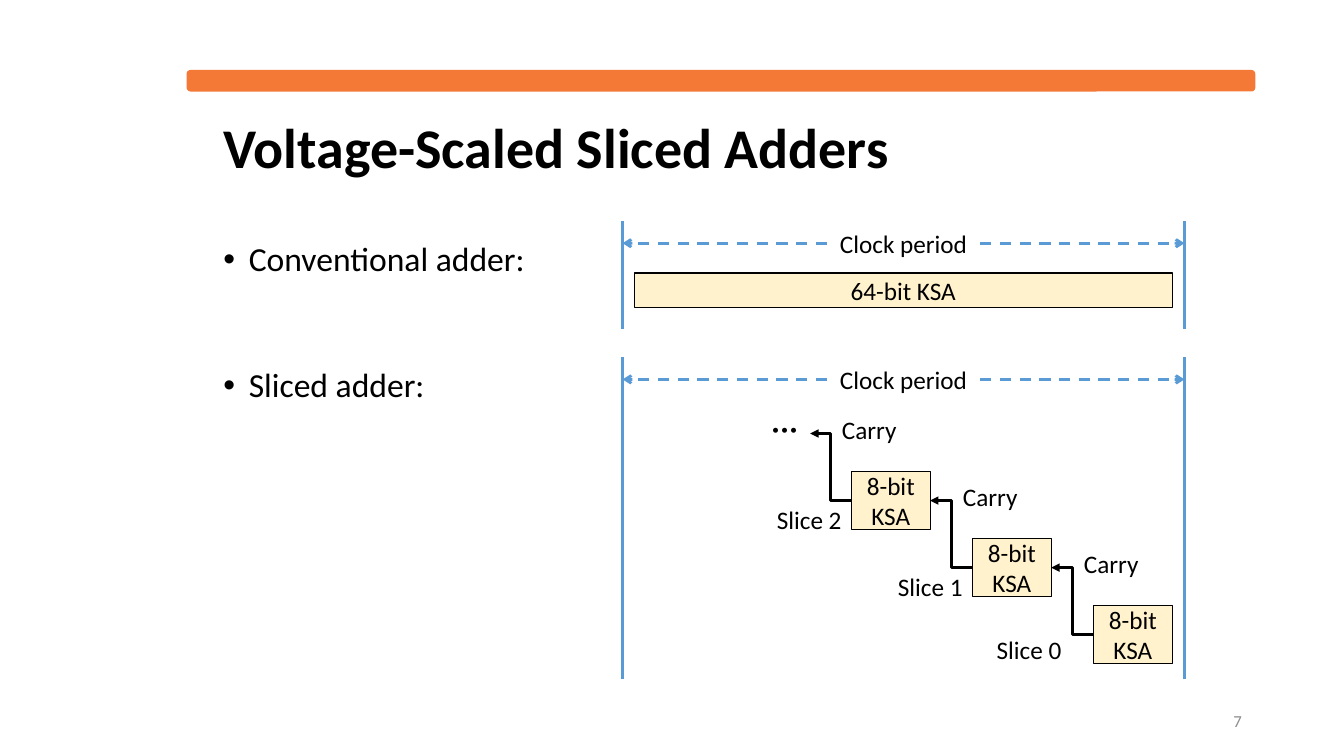
from dataclasses import dataclass

from lxml import etree
from pptx import Presentation
from pptx.dml.color import RGBColor
from pptx.enum.dml import MSO_LINE
from pptx.enum.shapes import MSO_CONNECTOR, MSO_SHAPE
from pptx.enum.text import MSO_ANCHOR, PP_ALIGN
from pptx.oxml.ns import qn
from pptx.util import Cm, Pt

STRAIGHT, ELBOW = MSO_CONNECTOR.STRAIGHT, MSO_CONNECTOR.ELBOW
RECTANGLE, ROUNDED = MSO_SHAPE.RECTANGLE, MSO_SHAPE.ROUNDED_RECTANGLE
LEFT, CENTER, RIGHT = PP_ALIGN.LEFT, PP_ALIGN.CENTER, PP_ALIGN.RIGHT
TOP, MIDDLE = MSO_ANCHOR.TOP, MSO_ANCHOR.MIDDLE
DASH = MSO_LINE.DASH
LEFT_SIDE, RIGHT_SIDE = 1, 3


@dataclass(frozen=True)
class Theme:
    font: str = "Calibri"
    ink: RGBColor = RGBColor(0x00, 0x00, 0x00)
    muted: RGBColor = RGBColor(0x8C, 0x8C, 0x8C)
    accent: RGBColor = RGBColor(0xF4, 0x78, 0x36)
    timing: RGBColor = RGBColor(0x5B, 0x9B, 0xD5)
    adder: RGBColor = RGBColor(0xFF, 0xF2, 0xCC)
    title: int = 40
    body: int = 24
    label: int = 18
    small: int = 12


@dataclass(frozen=True)
class Box:
    """A rectangle in centimetres."""
    left: float
    top: float
    width: float
    height: float

    @property
    def right(self):
        return self.left + self.width

    @property
    def bottom(self):
        return self.top + self.height

    @property
    def middle(self):
        return self.top + self.height / 2

    def lengths(self):
        return Cm(self.left), Cm(self.top), Cm(self.width), Cm(self.height)


THEME = Theme()


def add_span(para, text, size, color=THEME.ink, bold=False):
    span = para.add_run()
    span.text = text
    span.font.name = THEME.font
    span.font.size = Pt(size)
    span.font.color.rgb = color
    span.font.bold = bold


def add_text(page, box, text, size=THEME.label, align=CENTER, anchor=TOP,
             color=THEME.ink, bold=False, wrap=True):
    shape = page.shapes.add_textbox(*box.lengths())
    frame = shape.text_frame
    frame.word_wrap = wrap
    frame.vertical_anchor = anchor
    para = frame.paragraphs[0]
    para.alignment = align
    add_span(para, text, size, color, bold)
    return shape


def add_block(page, kind, box, fill, line, weight):
    shape = page.shapes.add_shape(kind, *box.lengths())
    shape.shadow.inherit = False
    shape.fill.solid()
    shape.fill.fore_color.rgb = fill
    shape.line.color.rgb = line
    shape.line.width = Pt(weight)
    return shape


def add_adder(page, box, text):
    shape = add_block(page, RECTANGLE, box, THEME.adder, THEME.ink, 0.75)
    frame = shape.text_frame
    frame.word_wrap = True
    frame.vertical_anchor = MIDDLE
    para = frame.paragraphs[0]
    para.alignment = CENTER
    add_span(para, text, THEME.label)
    return shape


def add_line(page, kind, start, end, color, head=None, dash=None):
    line = page.shapes.add_connector(kind, *(Cm(value) for value in (*start, *end)))
    line.line.color.rgb = color
    line.line.width = Pt(2)
    if dash:
        line.line.dash_style = dash
    if head:
        etree.SubElement(line.line._get_or_add_ln(), qn("a:tailEnd"), type=head)
    etree.SubElement(line._element.spPr, qn("a:effectLst"))
    return line


def add_header(page, box):
    bar = Box(box.left, box.top, box.width, 0.51)
    add_block(page, ROUNDED, bar, THEME.accent, THEME.accent, 1)
    heading = Box(box.left + 0.66, box.top + 0.86, box.width - 0.76, 2.31)
    title = add_text(page, heading, "Voltage-Scaled Sliced Adders", THEME.title,
                     LEFT, MIDDLE, bold=True)
    title.text_frame.paragraphs[0].line_spacing = 0.9


def add_bullets(page, box, items, gap):
    frame = page.shapes.add_textbox(*box.lengths()).text_frame
    frame.word_wrap = True
    for index, item in enumerate(items):
        para = frame.add_paragraph() if index else frame.paragraphs[0]
        props = para._p.get_or_add_pPr()
        props.set("marL", str(Cm(0.64)))
        props.set("indent", str(-Cm(0.64)))
        etree.SubElement(props, qn("a:buFont"), typeface="Arial")
        etree.SubElement(props, qn("a:buChar"), char="•")
        para.line_spacing = 0.9
        if index:
            para.space_before = Pt(gap)
        add_span(para, item, THEME.body)


def add_clock_period(page, box):
    """Bounds the box left and right and spans it with a labelled arrow pair."""
    for x in (box.left, box.right):
        add_line(page, STRAIGHT, (x, box.bottom), (x, box.top), THEME.timing)
    width = 3.86
    place = Box(box.left + (box.width - width) / 2, box.top + 0.06, width, 1.02)
    label = add_text(page, place, "Clock period")
    for x, edge, side in ((place.left, box.left, LEFT_SIDE),
                          (place.right, box.right, RIGHT_SIDE)):
        arrow = add_line(page, STRAIGHT, (x, place.middle), (edge, place.middle),
                         THEME.timing, "arrow", DASH)
        arrow.begin_connect(label, side)


def add_conventional(page, box):
    add_clock_period(page, box)
    adder = Box(box.left + 0.29, box.top + 1.32, box.width - 0.59, 0.86)
    add_adder(page, adder, "64-bit KSA")


def add_sliced(page, box):
    """Steps the slices up and left from the lower right corner of the box."""
    add_clock_period(page, box)
    step_x, step_y = 3.05, 1.69
    label_offsets = ((0.56, 0.58), (0, 0.69), (0, 0.69))
    carry = None
    for index, (gap, drop) in enumerate(label_offsets):
        place = Box(box.right - 2.29 - index * step_x,
                    box.bottom - 1.85 - index * step_y, 1.98, 1.45)
        adder = add_adder(page, place, "8-bit KSA")
        if carry:
            carry.end_connect(adder, RIGHT_SIDE)
        carry = add_line(page, ELBOW, (place.left, place.middle),
                         (place.left - 1.04, place.middle - step_y),
                         THEME.ink, "triangle")
        carry.begin_connect(adder, LEFT_SIDE)
        add_text(page, Box(place.left - gap - 2.16, place.top + drop, 2.16, 1.02),
                 f"Slice {index}", align=RIGHT, wrap=False)
        add_text(page, Box(place.left - 0.51, place.top - 1.57, 1.91, 1.02),
                 "Carry", wrap=False)
    more = add_text(page, Box(place.left - 2.29, place.top - 1.4, 1.19, 1.27),
                    "...", THEME.body, LEFT, bold=True, wrap=False)
    more.rotation = 180


def main():
    deck = Presentation()
    deck.slide_width, deck.slide_height = Cm(33.87), Cm(19.05)
    page = deck.slides.add_slide(deck.slide_layouts[6])
    add_header(page, Box(4.72, 1.78, 26.9, 3.17))
    add_bullets(page, Box(5.38, 5.99, 9.8, 10.26),
                ("Conventional adder:", "Sliced adder:"), 64)
    add_conventional(page, Box(15.69, 5.56, 14.16, 2.72))
    add_sliced(page, Box(15.69, 8.99, 14.16, 8.13))
    add_text(page, Box(23.93, 17.65, 7.62, 1.02), "7", THEME.small, RIGHT, MIDDLE,
             THEME.muted)
    deck.save("out.pptx")


if __name__ == "__main__":
    main()
